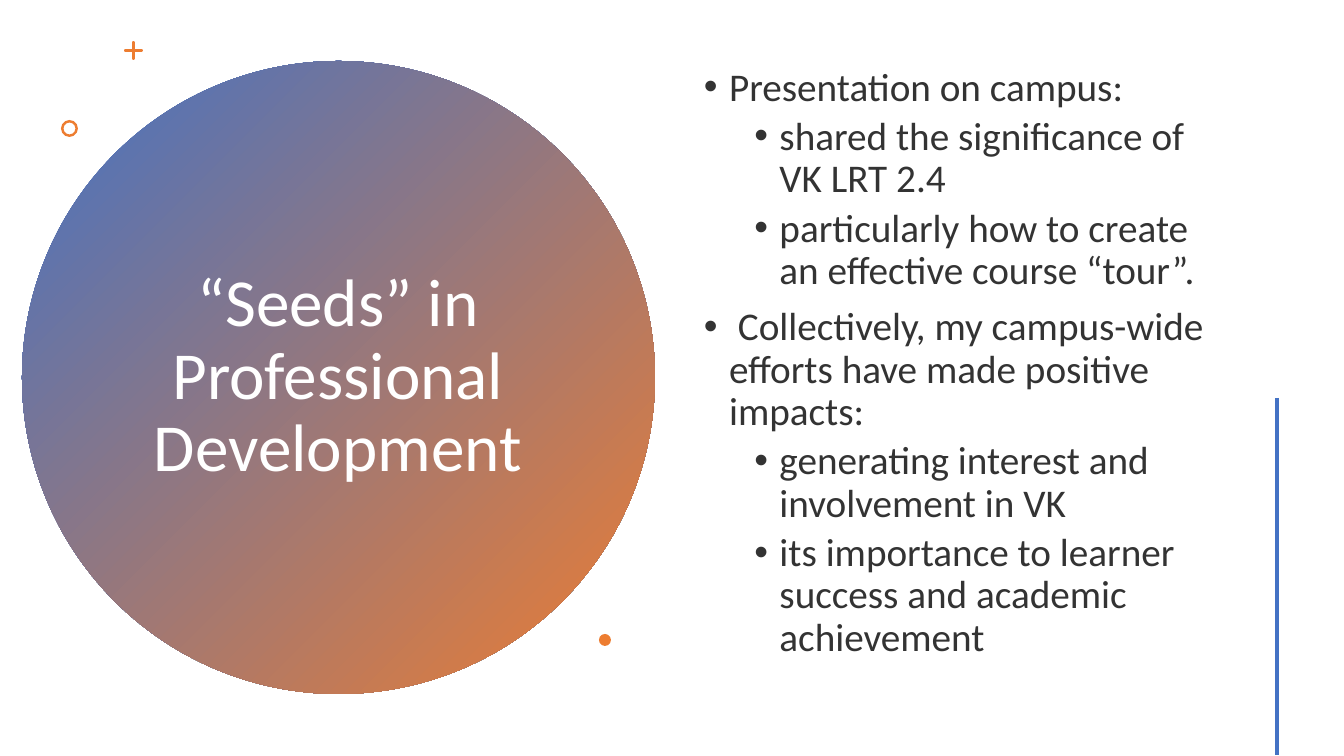
import math
from dataclasses import dataclass

from pptx import Presentation, util as u
from pptx.dml.color import RGBColor
from pptx.enum import shapes, text
from pptx.oxml.ns import qn

PX = 914400 / 100.8  # EMU per px


@dataclass(frozen=True)
class Theme:
    font: str = "Calibri"
    blue: RGBColor = RGBColor(0x44, 0x72, 0xC4)
    orange: RGBColor = RGBColor(0xED, 0x7D, 0x31)
    white: RGBColor = RGBColor(0xFF, 0xFF, 0xFF)
    ink: RGBColor = RGBColor(0x33, 0x33, 0x33)
    title_size: u.Pt = u.Pt(48)
    body_size: u.Pt = u.Pt(28)


theme = Theme()


def px(*lengths):
    return [round(length * PX) for length in lengths]


def add_span(para, words, size, color):
    para.line_spacing = 0.9
    span = para.add_run()
    span.text = words
    span.font.name, span.font.size = theme.font, size
    span.font.color.rgb = color


deck = Presentation()
deck.slide_width, deck.slide_height = px(1344, 756)
page = deck.slides.add_slide(deck.slide_layouts[5])

# Title over the large gradient circle
title = page.shapes.title
title.left, title.top, title.width, title.height = px(137, 142, 402, 471)
frame = title.text_frame
frame.word_wrap = True
frame.auto_size = text.MSO_AUTO_SIZE.NONE
frame.vertical_anchor = text.MSO_ANCHOR.MIDDLE
frame.paragraphs[0].alignment = text.PP_ALIGN.CENTER
add_span(frame.paragraphs[0], "“Seeds” in Professional Development",
         theme.title_size, theme.white)

circle = page.shapes.add_shape(shapes.MSO_SHAPE.OVAL, *px(22, 61, 633, 633))
circle.shadow.inherit = False
circle.line.fill.background()
circle.fill.gradient()
circle.fill.gradient_angle = 315
for stop, color in zip(circle.fill.gradient_stops, (theme.blue, theme.orange)):
    stop.color.rgb = color
title.element.addprevious(circle.element)

# Small orange ornaments: rounded plus, ring and dot
center_x, center_y, arm, radius = 133.5, 50.5, 8, 1.4
outline = []
for quarter in range(4):
    turn = quarter * math.pi / 2
    for step in range(-4, 5):
        bend = step * math.pi / 8
        along, across = arm + radius * math.cos(bend), radius * math.sin(bend)
        outline.append((along, across, turn))
    outline.append((radius, radius, turn))
points = [px(center_x + along * math.cos(turn) - across * math.sin(turn),
             center_y + along * math.sin(turn) + across * math.cos(turn))
          for along, across, turn in outline]
builder = page.shapes.build_freeform(*points[0])
builder.add_line_segments(points[1:], close=True)
plus = builder.convert_to_shape()

ring = page.shapes.add_shape(shapes.MSO_SHAPE.DONUT, *px(61, 120, 17, 17))
ring.adjustments[0] = 0.15
dot = page.shapes.add_shape(shapes.MSO_SHAPE.OVAL, *px(599, 634, 12, 12))
for ornament in (plus, ring, dot):
    ornament.shadow.inherit = False
    ornament.fill.solid()
    ornament.fill.fore_color.rgb = theme.orange
    ornament.line.fill.background()

# Two-level bulleted list
BULLETS = [
    (0, "Presentation on campus:"),
    (1, "shared the significance of VK LRT 2.4"),
    (1, "particularly how to create an effective course “tour”."),
    (0, " Collectively, my campus-wide efforts have made positive impacts:"),
    (1, "generating interest and involvement in VK"),
    (1, "its importance to learner success and academic achievement"),
]
box = page.shapes.add_textbox(*px(694, 57, 526, 613))
frame = box.text_frame
frame.word_wrap = True
frame.vertical_anchor = text.MSO_ANCHOR.MIDDLE
for index, (level, words) in enumerate(BULLETS):
    para = frame.add_paragraph() if index else frame.paragraphs[0]
    para.level = level
    para.space_before = u.Pt(5 if level else 10)
    add_span(para, words, theme.body_size, theme.ink)
    props = para._p.get_or_add_pPr()
    props.set("marL", str(u.Inches(0.25 + 0.5 * level)))
    props.set("indent", str(u.Inches(-0.25)))
    bullet_font = props.makeelement(qn("a:buFont"), {"typeface": "Arial"})
    bullet = props.makeelement(qn("a:buChar"), {"char": "•"})
    props.extend([bullet_font, bullet])

# Vertical rule at the right edge
rule = page.shapes.add_connector(shapes.MSO_CONNECTOR.STRAIGHT,
                                 *px(1277, 398, 1277, 755))
rule.line.color.rgb = theme.blue
rule.line.width = u.Pt(2.25)
props = rule.element.spPr
props.append(props.makeelement(qn("a:effectLst"), {}))

deck.save("out.pptx")
